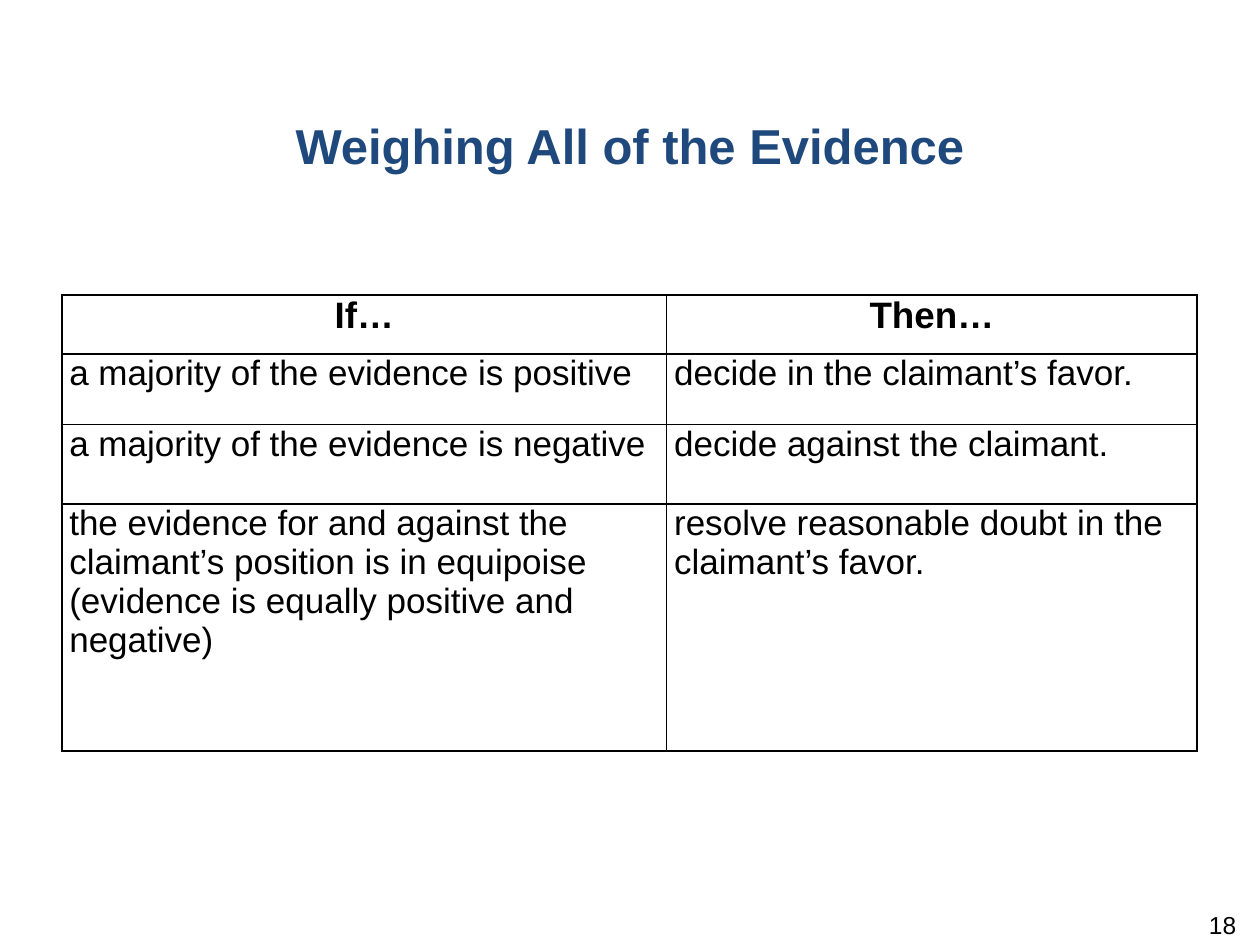
import pptx
import pptx.dml.color
import pptx.enum.text
import pptx.oxml
import pptx.oxml.ns
import pptx.util

Inches = pptx.util.Inches
Align = pptx.enum.text.PP_ALIGN


def color(value):
    return pptx.dml.color.RGBColor.from_string(value)


def write_text(frame, text, alignment, size, bold, text_color):
    paragraph = frame.paragraphs[0]
    paragraph.text = text
    paragraph.alignment = alignment
    font_format = {"name": "Arial", "size": pptx.util.Pt(size), "bold": bold}
    for name, value in font_format.items():
        setattr(paragraph.runs[0].font, name, value)
    paragraph.runs[0].font.color.rgb = color(text_color)


presentation = pptx.Presentation()
presentation.slide_width = Inches(10)
presentation.slide_height = Inches(7.5)
slide = presentation.slides.add_slide(presentation.slide_layouts[6])

text_boxes = [
    ("Weighing All of the Evidence", (0, 0.87, 10, 1.19), 0.05, Align.CENTER, 28, True, "1F497D"),
    ("18", (7.58, 7.22, 2.33, 0.4), 0, Align.RIGHT, 14, False, "000000"),
]
for text, position, margin_top, alignment, size, bold, text_color in text_boxes:
    shape = slide.shapes.add_textbox(*map(Inches, position))
    frame_format = {
        "word_wrap": True,
        "margin_top": Inches(margin_top),
        "vertical_anchor": pptx.enum.text.MSO_ANCHOR.TOP,
    }
    for name, value in frame_format.items():
        setattr(shape.text_frame, name, value)
    write_text(shape.text_frame, text, alignment, size, bold, text_color)

rows = [
    ("If…", "Then…"),
    ("a majority of the evidence is positive", "decide in the claimant’s favor."),
    ("a majority of the evidence is negative", "decide against the claimant."),
    (
        "the evidence for and against the claimant’s position is in equipoise "
        "(evidence is equally positive and negative)",
        "resolve reasonable doubt in the claimant’s favor.",
    ),
]
column_widths = [4.8, 4.21]
row_heights = [0.47, 0.56, 0.63, 1.96]
table = slide.shapes.add_table(
    len(rows), len(column_widths), Inches(0.49), Inches(2.34),
    Inches(sum(column_widths)), Inches(sum(row_heights)),
).table
table.horz_banding = False
for column, width in zip(table.columns, column_widths):
    column.width = Inches(width)
for row, height in zip(table.rows, row_heights):
    row.height = Inches(height)

cell_format = {
    "margin_left": Inches(0.06),
    "margin_right": Inches(0.06),
    "margin_top": 0,
    "margin_bottom": 0,
}
for row_index, row_texts in enumerate(rows):
    header = row_index == 0
    for column_index, text in enumerate(row_texts):
        cell = table.cell(row_index, column_index)
        for name, value in cell_format.items():
            setattr(cell, name, value)
        write_text(
            cell.text_frame, text, Align.CENTER if header else Align.LEFT,
            21 if header else 20, header, "000000",
        )
        properties = cell._tc.get_or_add_tcPr()
        for side in ("lnL", "lnR", "lnT", "lnB"):
            properties.append(pptx.oxml.parse_xml(
                f'<a:{side} {pptx.oxml.ns.nsdecls("a")} w="12700"><a:solidFill>'
                f'<a:srgbClr val="000000"/></a:solidFill></a:{side}>'
            ))
        cell.fill.background()

presentation.save("out.pptx")
